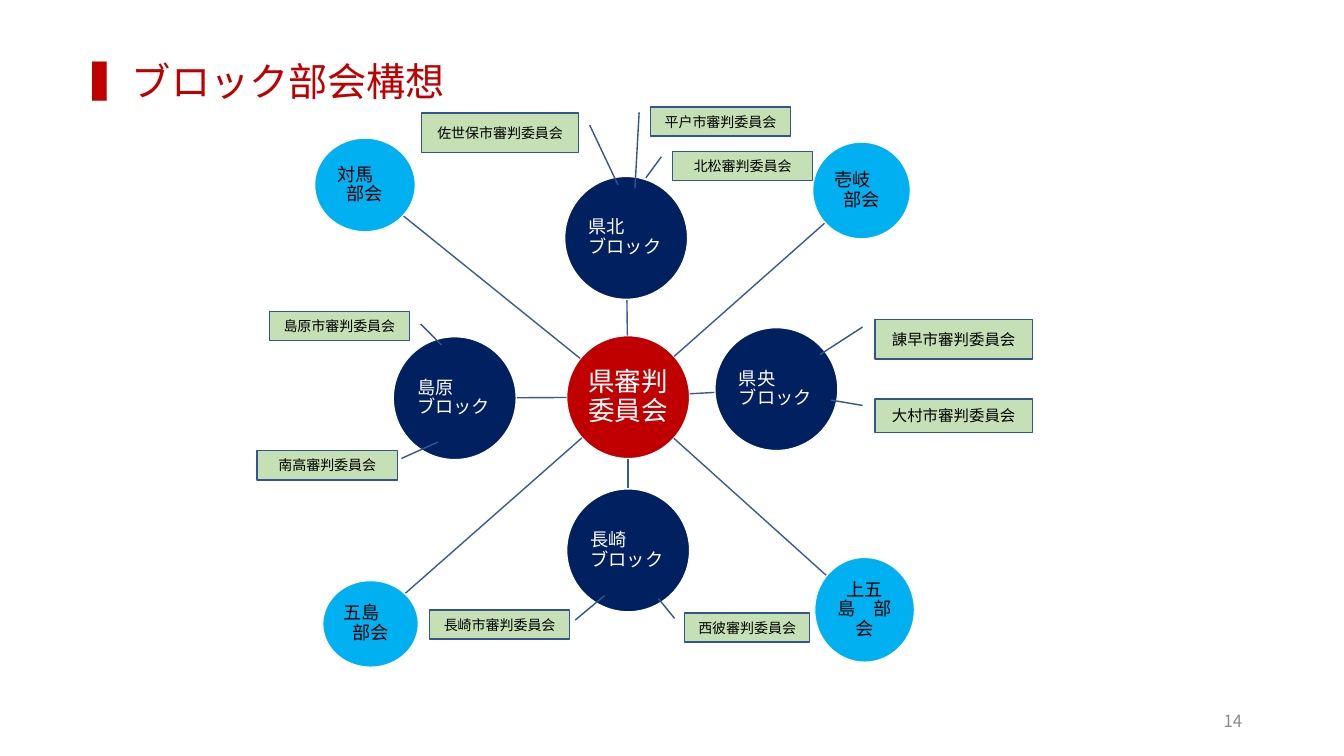
from dataclasses import dataclass
from math import hypot

from lxml.etree import SubElement
from pptx import Presentation
from pptx.dml.color import RGBColor
from pptx.enum.shapes import MSO_CONNECTOR, MSO_SHAPE
from pptx.enum.text import MSO_ANCHOR, MSO_AUTO_SIZE, PP_ALIGN
from pptx.oxml.ns import qn
from pptx.shapes.autoshape import Shape
from pptx.slide import Slide
from pptx.text.text import TextFrame
from pptx.util import Inches, Pt

FONT = "Noto Sans CJK JP"
COLORS = {
    "red": "C00000",
    "navy": "002060",
    "sky": "00B0F0",
    "green": "C5E0B4",
    "spoke": "365B9D",
    "border": "325491",
    "white": "FFFFFF",
    "black": "000000",
    "gray": "8C8C8C",
}


@dataclass(frozen=True)
class Circle:
    text: str
    left: float
    top: float
    width: float
    height: float
    fill: str
    color: str
    size: int = 13
    align: PP_ALIGN = PP_ALIGN.CENTER
    indent: float = 0.01

    @property
    def center(self) -> tuple[float, float]:
        return self.left + self.width / 2, self.top + self.height / 2

    def edge_toward(self, other: "Circle") -> tuple[float, float]:
        (x, y), (other_x, other_y) = self.center, other.center
        dx, dy = other_x - x, other_y - y
        scale = 1 / hypot(dx * 2 / self.width, dy * 2 / self.height)
        return x + dx * scale, y + dy * scale


@dataclass(frozen=True)
class Committee:
    text: str
    left: float
    top: float
    width: float
    height: float
    leader: tuple[float, float, float, float]
    size: int = 10


def block(name: str, left: float, top: float) -> Circle:
    return Circle(f"{name}\vブロック", left, top, 1.22, 1.22, "navy", "white",
                  align=PP_ALIGN.LEFT, indent=0.06)


def island(text: str, left: float, top: float, width: float, height: float) -> Circle:
    return Circle(text, left, top, width, height, "sky", "black")


PREFECTURE = Circle("県審判委員会", 5.62, 3.33, 1.22, 1.22, "red", "white", size=19)
SECTIONS = [
    block("県北", 5.6, 1.75),
    island("壱岐　部会", 8.06, 1.41, 0.97, 0.96),
    block("県央", 7.09, 3.25),
    island("上五島　部会", 8.08, 5.53, 0.99, 1.04),
    block("長崎", 5.62, 4.85),
    island("五島　部会", 3.2, 5.76, 0.95, 0.86),
    block("島原", 3.9, 3.34),
    island("対馬　部会", 3.12, 1.37, 1.0, 0.93),
]
COMMITTEES = [
    Committee("諌早市審判委員会", 8.68, 3.17, 1.56, 0.39, (0.19, -0.08, 0.89, -0.35), 11),
    Committee("大村市審判委員会", 8.68, 3.96, 1.56, 0.33, (0.19, -0.08, 0.03, -0.28), 11),
    Committee("平戸市審判委員会", 6.45, 1.06, 1.39, 0.29, (0.19, -0.08, 2.79, -0.11)),
    Committee("佐世保市審判委員会", 4.18, 1.12, 1.56, 0.39, (0.31, 1.07, 1.83, 1.25)),
    Committee("北松審判委員会", 6.67, 1.5, 1.39, 0.29, (0.19, -0.08, 0.91, -0.19)),
    Committee("長崎市審判委員会", 4.26, 6.05, 1.39, 0.29, (0.35, 1.04, -0.49, 1.25)),
    Committee("西彼審判委員会", 6.79, 6.08, 1.24, 0.29, (0.19, -0.08, -0.49, -0.21)),
    Committee("島原市審判委員会", 2.67, 3.09, 1.39, 0.29, (0.43, 1.08, 1.15, 1.23)),
    Committee("南高審判委員会", 2.55, 4.47, 1.39, 0.29, (0.27, 1.03, -0.29, 1.29)),
]


def rgb(name: str) -> RGBColor:
    return RGBColor.from_string(COLORS[name])


def write_text(frame: TextFrame, text: str, *, size: int, color: str,
               align: PP_ALIGN = PP_ALIGN.CENTER,
               anchor: MSO_ANCHOR = MSO_ANCHOR.MIDDLE,
               line_spacing: float = 1.0) -> None:
    frame.word_wrap = True
    frame.auto_size = MSO_AUTO_SIZE.NONE
    frame.vertical_anchor = anchor
    frame.text = text
    paragraph = frame.paragraphs[0]
    paragraph.alignment = align
    paragraph.line_spacing = line_spacing
    for run in paragraph.runs:
        run.font.size = Pt(size)
        run.font.name = FONT
        run.font.color.rgb = rgb(color)
        SubElement(run.font._element, qn("a:ea"), typeface=FONT)


def add_filled(slide: Slide, kind: MSO_SHAPE, place: Circle | Committee,
               fill: str, border: str) -> Shape:
    shape = slide.shapes.add_shape(kind, Inches(place.left), Inches(place.top),
                                   Inches(place.width), Inches(place.height))
    shape.shadow.inherit = False
    shape.fill.solid()
    shape.fill.fore_color.rgb = rgb(fill)
    shape.line.color.rgb = rgb(border)
    shape.line.width = Pt(1)
    return shape


def draw_circle(slide: Slide, circle: Circle) -> None:
    frame = add_filled(slide, MSO_SHAPE.OVAL, circle, circle.fill, "white").text_frame
    frame.margin_left = Inches(circle.indent)
    frame.margin_right = frame.margin_top = frame.margin_bottom = Inches(0.01)
    write_text(frame, circle.text, size=circle.size, color=circle.color,
               align=circle.align, line_spacing=0.9)


def draw_spoke(slide: Slide, hub: Circle, section: Circle) -> None:
    ends = (*hub.edge_toward(section), *section.edge_toward(hub))
    spoke = slide.shapes.add_connector(MSO_CONNECTOR.STRAIGHT, *map(Inches, ends))
    spoke.line.color.rgb = rgb("spoke")
    spoke.line.width = Pt(1)
    SubElement(spoke._element.spPr, qn("a:effectLst"))


def draw_committee(slide: Slide, committee: Committee) -> None:
    callout = add_filled(slide, MSO_SHAPE.LINE_CALLOUT_1, committee, "green", "border")
    for index, value in enumerate(committee.leader):
        callout.adjustments[index] = value
    write_text(callout.text_frame, committee.text, size=committee.size, color="black")


def main() -> None:
    deck = Presentation()
    deck.slide_width, deck.slide_height = Inches(13.33), Inches(7.5)
    slide = deck.slides.add_slide(deck.slide_layouts[5])

    heading = slide.shapes.title
    heading.left, heading.top = Inches(0.82), Inches(0.52)
    heading.width, heading.height = Inches(4.23), Inches(0.57)
    write_text(heading.text_frame, "▍ブロック部会構想", size=28, color="red",
               align=PP_ALIGN.LEFT, anchor=MSO_ANCHOR.TOP)

    page_number = slide.shapes.add_textbox(Inches(9.42), Inches(6.95), Inches(3), Inches(0.4))
    write_text(page_number.text_frame, "14", size=12, color="gray", align=PP_ALIGN.RIGHT)

    draw_circle(slide, PREFECTURE)
    for section in SECTIONS:
        draw_spoke(slide, PREFECTURE, section)
        draw_circle(slide, section)
    for committee in COMMITTEES:
        draw_committee(slide, committee)

    deck.save("out.pptx")


if __name__ == "__main__":
    main()
